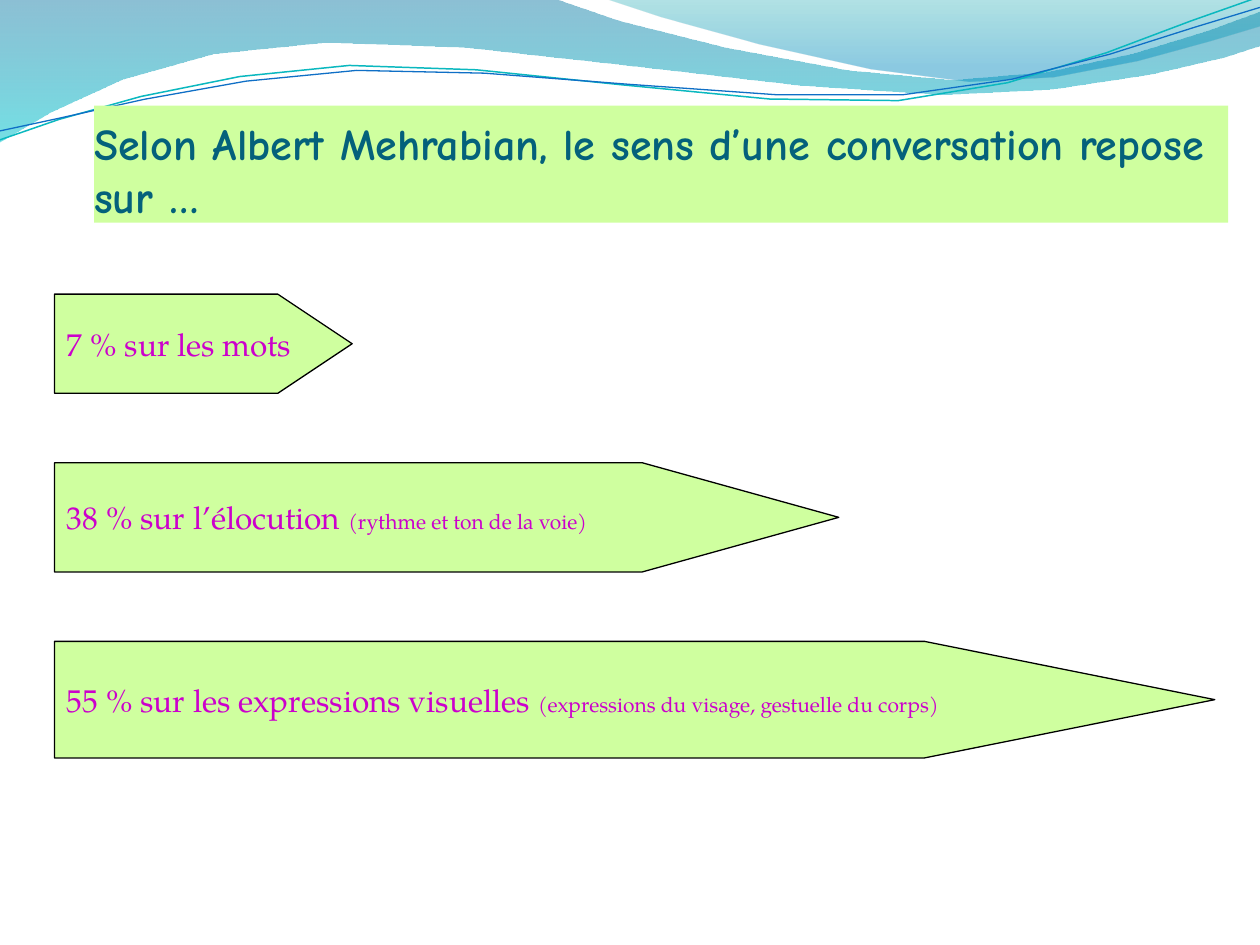
"""Build a slide showing what carries the meaning of a conversation."""
from lxml.etree import SubElement
from pptx import Presentation
from pptx.dml.color import RGBColor
from pptx.enum.shapes import MSO_SHAPE as Shape
from pptx.enum.text import MSO_ANCHOR as Anchor, PP_ALIGN as Align
from pptx.oxml.ns import qn
from pptx.util import Cm, Pt

LIME = RGBColor(0xCF, 0xFF, 0x9F)
BLACK = RGBColor(0x00, 0x00, 0x00)
MAGENTA = RGBColor(0xCC, 0x00, 0xCC)
TITLE_TEAL = RGBColor(0x04, 0x61, 0x7B)
DEEP_BLUE = RGBColor(0x00, 0x74, 0xA1)
CYAN = RGBColor(0x00, 0xC6, 0xCF)
SEA_GREEN = RGBColor(0x00, 0xA1, 0xA9)
SKY_BLUE = RGBColor(0x00, 0x8B, 0xBF)
LINE_TEAL = RGBColor(0x0A, 0xB8, 0xBF)
LINE_BLUE = RGBColor(0x0F, 0x6F, 0xC6)
CURVE_STEPS = 4

presentation = Presentation()
presentation.slide_width = Cm(25.4)
presentation.slide_height = Cm(19.05)
slide = presentation.slides.add_slide(presentation.slide_layouts[6])


def add_outline(start, segments, close):
    """Draw straight segments (one point) and cubic curves (three points)."""
    points = [start]
    for segment in segments:
        if len(segment) == 1:
            points.append(segment[0])
            continue
        corners = [points[-1], *segment]
        for step in range(1, CURVE_STEPS + 1):
            t = step / CURVE_STEPS
            weights = ((1 - t) ** 3, 3 * t * (1 - t) ** 2, 3 * t**2 * (1 - t), t**3)
            points.append(tuple(
                sum(weight * corner[axis] for weight, corner in zip(weights, corners))
                for axis in (0, 1)
            ))
    points = [(Cm(x), Cm(y)) for x, y in points]
    builder = slide.shapes.build_freeform(*points[0])
    builder.add_line_segments(points[1:], close=close)
    shape = builder.convert_to_shape()
    shape.shadow.inherit = False
    return shape


def add_run(paragraph, text, font_name, size, color, bold=False):
    run = paragraph.add_run()
    run.text = text
    run.font.name = font_name
    run.font.size = Pt(size)
    run.font.color.rgb = color
    run.font.bold = bold


waves = [
    ((0, 0), [
        [(11.18, -0.03)],
        [(12.09, 0.43), (16.87, 1.6), (19.25, 1.6)],
        [(21.67, 1.6), (24.33, 0.66), (25.4, 0.23)],
        [(25.43, 0.91)],
        [(24.97, 1.12), (22.1, 1.93), (18.95, 1.91)],
        [(15.8, 1.91), (9.7, 0.71), (6.53, 0.86)],
        [(3.28, 0.91), (1.17, 2.11), (-0.03, 2.87)],
    ], [(0, DEEP_BLUE, 45), (1, CYAN, 55)]),
    ((12.17, -0.03), [
        [(12.93, 0.28), (17.32, 1.57), (19.53, 1.65)],
        [(21.74, 1.75), (24.41, 0.81), (25.4, 0.53)],
        [(25.4, 0)],
    ], [(0, SEA_GREEN, 30), (0.8, SKY_BLUE, 45)]),
]
for start, segments, stops in waves:
    wave = add_outline(start, segments, True)
    wave.line.fill.background()
    wave.fill.gradient()
    wave.fill.gradient_angle = 270
    for stop, (position, color, _) in zip(wave.fill.gradient_stops, stops):
        stop.position = position
        stop.color.rgb = color
    for element, (_, _, opacity) in zip(wave.element.iter(qn("a:srgbClr")), stops):
        SubElement(element, qn("a:alpha"), val=str(opacity * 1000))

ripples = [
    ((0, 2.82), [
        [(1.22, 2.36), (4.01, 1.45), (7.04, 1.32)],
        [(10.03, 1.19), (15.06, 2.26), (18.11, 2.03)],
        [(21.16, 1.8), (23.83, 0.38), (25.35, -0.05)],
    ], LINE_TEAL, 0.85),
    ((0, 2.64), [
        [(1.19, 2.44), (4.17, 1.55), (7.19, 1.42)],
        [(10.24, 1.3), (15.16, 2.13), (18.21, 1.91)],
        [(21.23, 1.7), (23.9, 0.53), (25.4, 0.15)],
    ], LINE_BLUE, 0.75),
]
for start, segments, color, width in ripples:
    ripple = add_outline(start, segments, False)
    ripple.fill.background()
    ripple.line.color.rgb = color
    ripple.line.width = Pt(width)

title = slide.shapes.add_textbox(Cm(1.9), Cm(2.13), Cm(22.86), Cm(2.36))
title.fill.solid()
title.fill.fore_color.rgb = LIME
frame = title.text_frame
frame.word_wrap = True
frame.vertical_anchor = Anchor.BOTTOM
frame.margin_left = frame.margin_right = frame.margin_bottom = 0
add_run(frame.paragraphs[0], "Selon Albert Mehrabian, le sens d’une conversation repose sur …",
        "Comic Neue", 25.2, TITLE_TEAL, True)

arrows = [
    (5.93, 6.0, 2.0, 0.75, "7 % sur les mots", ""),
    (9.33, 15.81, 2.2, 1.8, "38 % sur l’élocution ", "(rythme et ton de la voie)"),
    (12.93, 23.39, 2.35, 2.49, "55 % sur les expressions visuelles ",
     "(expressions du visage, gestuelle du corps)"),
]
for top, width, height, point_ratio, label, detail in arrows:
    arrow = slide.shapes.add_shape(Shape.PENTAGON, Cm(1.1), Cm(top), Cm(width), Cm(height))
    arrow.adjustments[0] = point_ratio
    arrow.shadow.inherit = False
    arrow.fill.solid()
    arrow.fill.fore_color.rgb = LIME
    arrow.line.color.rgb = BLACK
    arrow.line.width = Pt(0.75)
    frame = arrow.text_frame
    frame.word_wrap = False
    frame.vertical_anchor = Anchor.MIDDLE
    paragraph = frame.paragraphs[0]
    paragraph.alignment = Align.LEFT
    add_run(paragraph, label, "TeX Gyre Pagella", 18, MAGENTA)
    if detail:
        add_run(paragraph, detail, "TeX Gyre Pagella", 12, MAGENTA)

presentation.save("out.pptx")
